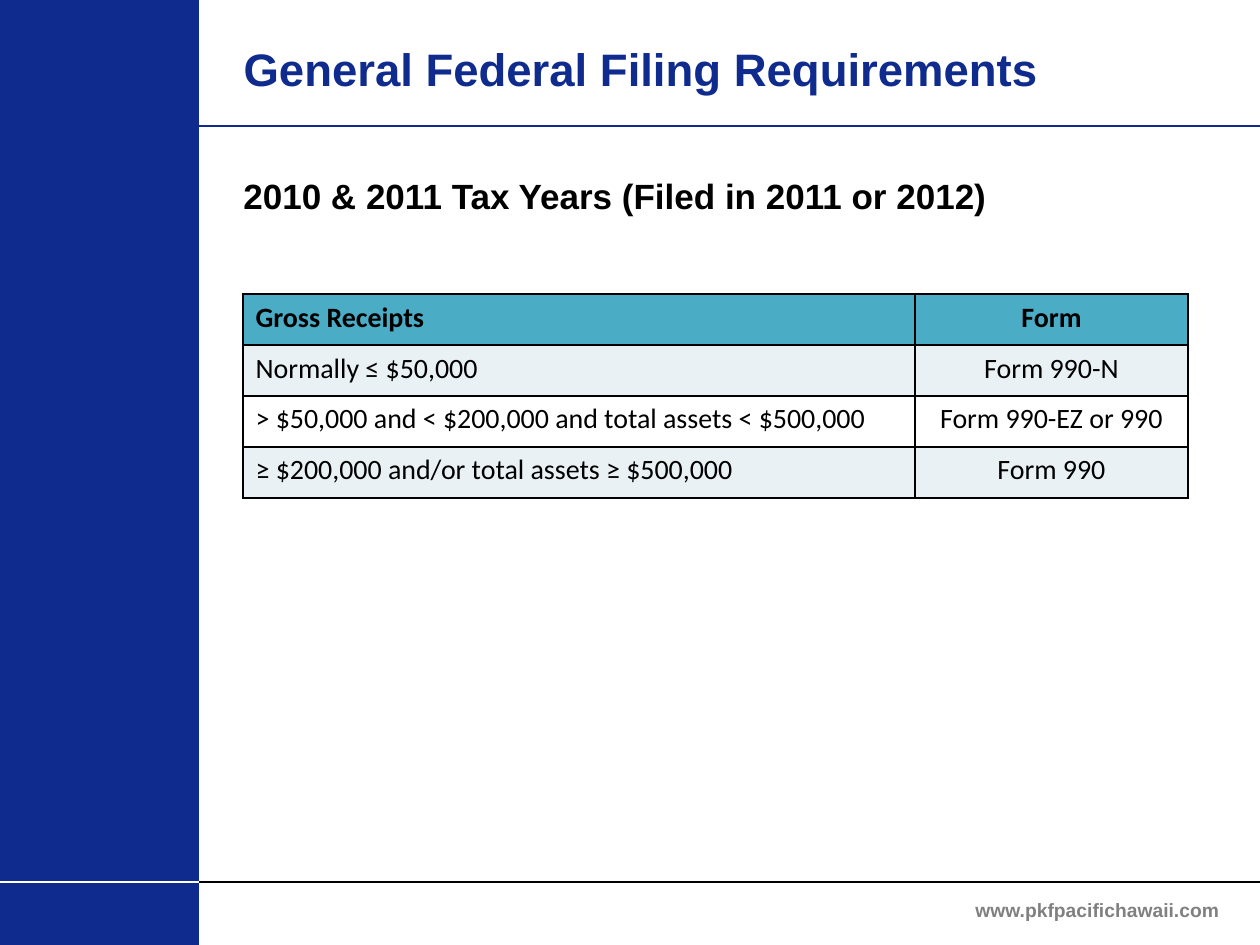
from lxml.etree import SubElement
from pptx import Presentation
from pptx.dml.color import RGBColor
from pptx.enum.shapes import MSO_CONNECTOR, MSO_SHAPE
from pptx.enum.text import MSO_ANCHOR, MSO_AUTO_SIZE, PP_ALIGN
from pptx.oxml.ns import qn
from pptx.util import Emu, Pt

PX_PER_INCH = 126
NAVY, BLACK, WHITE, GRAY = "0E2B8D", "000000", "FFFFFF", "808080"
TEAL, PALE = "4BACC6", "E9F1F5"
SIDEBAR_WIDTH, PAGE_WIDTH, PAGE_HEIGHT = 199, 1260, 945
FOOTER_Y = 882
ROW_HEIGHT = 51
COLUMN_WIDTHS = (672, 273)
FILING_ROWS = (
    ("Gross Receipts", "Form"),
    ("Normally ≤ $50,000", "Form 990-N"),
    ("> $50,000 and < $200,000 and total assets < $500,000", "Form 990-EZ or 990"),
    ("≥ $200,000 and/or total assets ≥ $500,000", "Form 990"),
)


def px(length):
    """Convert pixels to EMU."""
    return Emu(round(length * 914400 / PX_PER_INCH))


def color(code):
    """Turn a hex string into a colour."""
    return RGBColor.from_string(code)


def write(frame, text, size, code, font="Arial", bold=True, align=PP_ALIGN.LEFT):
    """Put one formatted paragraph into a text frame."""
    frame.text = text
    para = frame.paragraphs[0]
    para.alignment = align
    for span in para.runs:
        span.font.name = font
        span.font.size = Pt(size)
        span.font.bold = bold
        span.font.color.rgb = color(code)


def set_title(page, text):
    """Place and format the title placeholder."""
    title = page.shapes.title
    title.left, title.top, title.width, title.height = map(px, (231, -10, 1008, 157))
    frame = title.text_frame
    write(frame, text, 26, NAVY)
    frame.auto_size = MSO_AUTO_SIZE.NONE
    frame.vertical_anchor = MSO_ANCHOR.MIDDLE


def add_text(page, area, text, size, code, align=PP_ALIGN.LEFT, anchor=MSO_ANCHOR.TOP):
    """Add a wrapping text box."""
    frame = page.shapes.add_textbox(*map(px, area)).text_frame
    frame.word_wrap = True
    frame.vertical_anchor = anchor
    write(frame, text, size, code, align=align)


def add_sidebar(page):
    """Add the solid band along the left edge."""
    band = page.shapes.add_shape(
        MSO_SHAPE.RECTANGLE, 0, 0, px(SIDEBAR_WIDTH), px(PAGE_HEIGHT))
    band.shadow.inherit = False
    band.fill.solid()
    band.fill.fore_color.rgb = color(NAVY)
    band.line.fill.background()


def add_rule(page, start, end, y, code):
    """Add a horizontal rule without a shadow."""
    rule = page.shapes.add_connector(
        MSO_CONNECTOR.STRAIGHT, px(start), px(y), px(end), px(y))
    rule.line.color.rgb = color(code)
    rule.line.width = Pt(1)
    SubElement(rule._element.spPr, qn("a:effectLst"))


def set_borders(cell):
    """Draw a thin black line on each side of a cell."""
    properties = cell._tc.get_or_add_tcPr()
    for side in ("a:lnL", "a:lnR", "a:lnT", "a:lnB"):
        line = SubElement(properties, qn(side), w=str(Pt(1)))
        fill = SubElement(line, qn("a:solidFill"))
        SubElement(fill, qn("a:srgbClr"), val=BLACK)


def add_filing_table(page, left, top):
    """Add the table of receipts and required forms."""
    table = page.shapes.add_table(
        len(FILING_ROWS), len(COLUMN_WIDTHS), px(left), px(top),
        px(sum(COLUMN_WIDTHS)), px(ROW_HEIGHT * len(FILING_ROWS))).table
    for column, width in zip(table.columns, COLUMN_WIDTHS):
        column.width = px(width)
    for r, texts in enumerate(FILING_ROWS):
        table.rows[r].height = px(ROW_HEIGHT)
        shade = TEAL if r == 0 else PALE if r % 2 else WHITE
        for c, text in enumerate(texts):
            cell = table.cell(r, c)
            set_borders(cell)
            cell.fill.solid()
            cell.fill.fore_color.rgb = color(shade)
            align = PP_ALIGN.CENTER if c else PP_ALIGN.LEFT
            write(cell.text_frame, text, 16, BLACK, "Calibri", r == 0, align)


def main():
    """Build and save the slide."""
    deck = Presentation()
    deck.slide_width, deck.slide_height = px(PAGE_WIDTH), px(PAGE_HEIGHT)
    page = deck.slides.add_slide(deck.slide_layouts[5])
    add_sidebar(page)
    add_rule(page, 0, PAGE_WIDTH, FOOTER_Y, BLACK)
    add_rule(page, 0, SIDEBAR_WIDTH, FOOTER_Y, WHITE)
    add_rule(page, SIDEBAR_WIDTH, PAGE_WIDTH, 126, NAVY)
    set_title(page, "General Federal Filing Requirements")
    add_text(page, (231, 168, 955, 73),
             "2010 & 2011 Tax Years (Filed in 2011 or 2012)", 20, BLACK)
    add_text(page, (935, 885, 325, 50), "www.pkfpacifichawaii.com", 11, GRAY,
             PP_ALIGN.CENTER, MSO_ANCHOR.MIDDLE)
    add_filing_table(page, 243, 294)
    deck.save("out.pptx")


if __name__ == "__main__":
    main()
